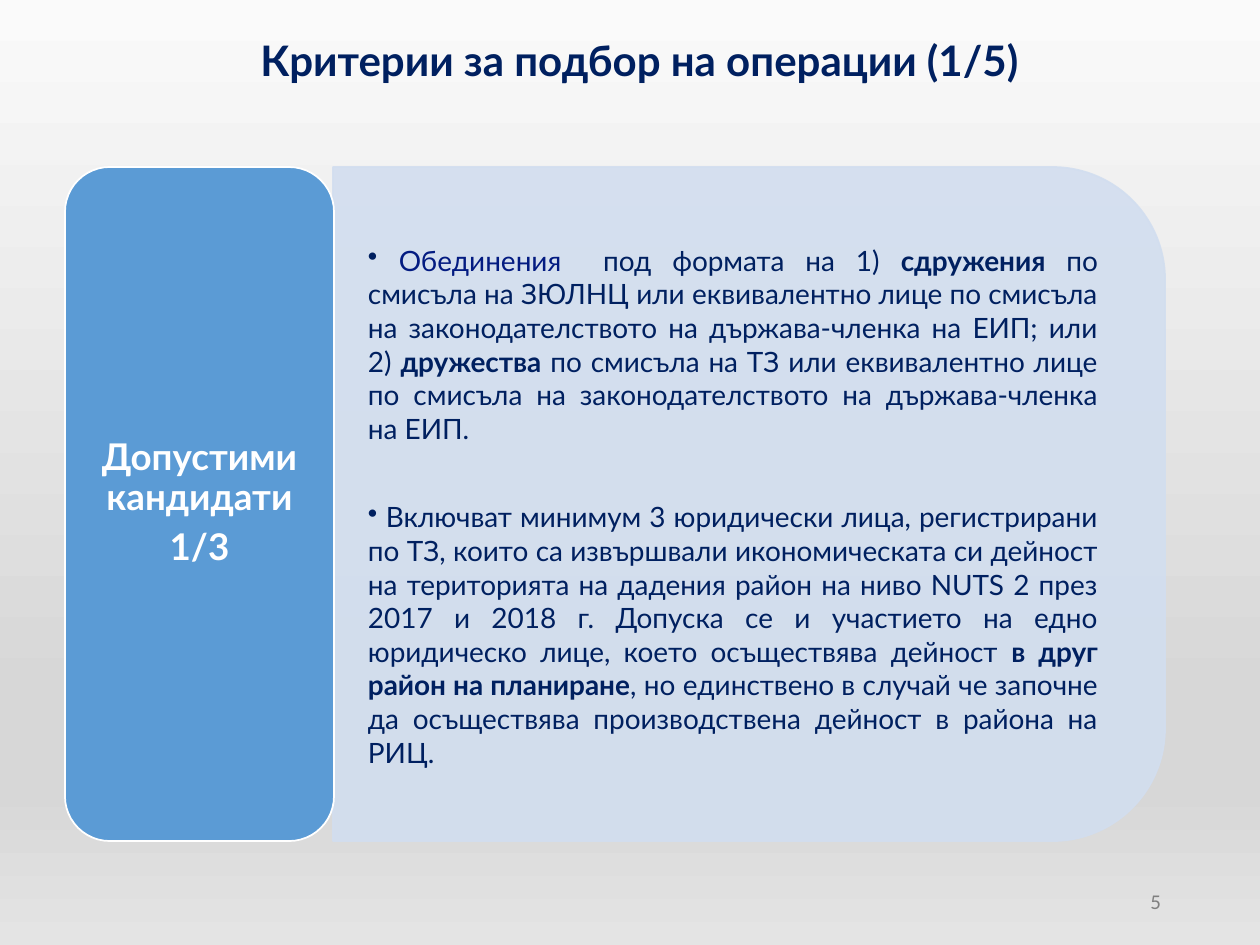
from copy import deepcopy
from dataclasses import dataclass

from lxml import etree
from pptx import Presentation
from pptx.dml.color import RGBColor
from pptx.enum.shapes import MSO_SHAPE
from pptx.enum.text import MSO_ANCHOR, PP_ALIGN
from pptx.oxml.ns import qn
from pptx.util import Pt

PX = 914400 / 126
ROUNDED = MSO_SHAPE.ROUNDED_RECTANGLE
ROUNDED_TOP = MSO_SHAPE.ROUND_2_SAME_RECTANGLE
MIDDLE = MSO_ANCHOR.MIDDLE
CENTER, RIGHT, JUSTIFY = PP_ALIGN.CENTER, PP_ALIGN.RIGHT, PP_ALIGN.JUSTIFY


@dataclass(frozen=True)
class Theme:
    navy: str = "002060"
    accent: str = "031B81"
    blue: str = "5B9BD5"
    pale: str = "D2DEEF"
    white: str = "FFFFFF"
    gray: str = "808080"
    backdrop: tuple = ((0, "FAFAFA"), (74, "D7D7D7"), (83, "D7D7D7"), (100, "E4E4E4"))
    font: str = "Lato"
    number_font: str = "Calibri"
    title_size: int = 24
    label_size: int = 21
    body_size: int = 16
    number_size: int = 12


@dataclass(frozen=True)
class Span:
    text: str
    bold: bool = False
    color: str = Theme.navy


def emu(*lengths):
    return [round(length * PX) for length in lengths]


class SlideBuilder:
    def __init__(self, slide, theme):
        self.slide = slide
        self.theme = theme

    def background(self):
        fill = self.slide.background.fill
        fill.gradient()
        fill.gradient_angle = 270
        stops = fill.gradient_stops
        stop_list = self.slide.element.find(".//" + qn("a:gsLst"))
        for _ in range(len(self.theme.backdrop) - len(stops)):
            stop_list.append(deepcopy(stop_list[0]))
        for element, (position, color) in zip(stop_list, self.theme.backdrop):
            element.set("pos", str(position * 1000))
            for child in list(element):
                element.remove(child)
            etree.SubElement(element, qn("a:srgbClr"), val=color)

    def shape(self, kind, box, fill, line, rotation=0, opacity=100):
        shape = self.slide.shapes.add_shape(kind, *emu(*box))
        shape.shadow.inherit = False
        shape.rotation = rotation
        shape.fill.solid()
        shape.fill.fore_color.rgb = RGBColor.from_string(fill)
        shape.line.color.rgb = RGBColor.from_string(line)
        shape.line.width = Pt(1)
        if opacity < 100:
            for color in shape.element.spPr.iter(qn("a:srgbClr")):
                etree.SubElement(color, qn("a:alpha"), val=str(opacity * 1000))
        return shape

    def text_box(self, box):
        return self.slide.shapes.add_textbox(*emu(*box))

    def set_text(self, shape, paragraphs, size, align, font=None, inset=(12, 6),
                 spacing=None, gap=0, bullet=False):
        frame = shape.text_frame
        frame.word_wrap = True
        frame.vertical_anchor = MIDDLE
        horizontal, vertical = emu(*inset)
        frame.margin_left = frame.margin_right = horizontal
        frame.margin_top = frame.margin_bottom = vertical
        for index, spans in enumerate(paragraphs):
            paragraph = frame.add_paragraph() if index else frame.paragraphs[0]
            paragraph.alignment = align
            if spacing:
                paragraph.line_spacing = spacing
            if index:
                paragraph.space_before = Pt(gap)
            if bullet:
                properties = paragraph._p.get_or_add_pPr()
                properties.set("marL", "0")
                properties.set("indent", "0")
                etree.SubElement(properties, qn("a:buChar"), char="•")
            for span in spans:
                run = paragraph.add_run()
                run.text = span.text
                run.font.name = font or self.theme.font
                run.font.size = Pt(size)
                run.font.bold = span.bold
                run.font.color.rgb = RGBColor.from_string(span.color)


def main():
    theme = Theme()
    presentation = Presentation()
    presentation.slide_width, presentation.slide_height = emu(1260, 945)
    slide = presentation.slides.add_slide(presentation.slide_layouts[6])
    builder = SlideBuilder(slide, theme)
    builder.background()

    number = builder.text_box((890, 876, 283, 50))
    builder.set_text(number, [[Span("5", color=theme.gray)]],
                     theme.number_size, RIGHT, theme.number_font)

    title = builder.text_box((74, 18, 1131, 90))
    builder.set_text(title, [[Span("Критерии за подбор на операции (1/5)", True)]],
                     theme.title_size, CENTER, spacing=0.9)

    builder.shape(ROUNDED_TOP, (412, 88, 674, 832), theme.pale, theme.pale, 90, 90)
    criteria = [
        [
            Span(" "),
            Span("Обединения", color=theme.accent),
            Span("  под формата на 1) "),
            Span("сдружения", True),
            Span(" по смисъла на ЗЮЛНЦ или еквивалентно лице по смисъла на "
                 "законодателството на държава-членка на ЕИП; или 2) "),
            Span("дружества", True),
            Span(" по смисъла на ТЗ или еквивалентно лице по смисъла на "
                 "законодателството на държава-членка на ЕИП."),
        ],
        [
            Span(" Включват минимум 3 юридически лица, регистрирани по ТЗ, които са "
                 "извършвали икономическата си дейност на територията на дадения район "
                 "на ниво NUTS 2 през 2017 и 2018 г. Допуска се и участието на едно "
                 "юридическо лице, което осъществява дейност "),
            Span("в друг район на планиране", True),
            Span(", но единствено в случай че започне да осъществява производствена "
                 "дейност в района на РИЦ."),
        ],
    ]
    body = builder.text_box((334, 202, 798, 608))
    builder.set_text(body, criteria, theme.body_size, JUSTIFY,
                     inset=(34, 18), gap=31.5, bullet=True)

    label = builder.shape(ROUNDED, (65, 167, 269, 674), theme.blue, theme.white)
    builder.set_text(label, [[Span(text, True, theme.white)]
                             for text in ("Допустими кандидати", "1/3")],
                     theme.label_size, CENTER, spacing=0.9, gap=6)

    presentation.save("out.pptx")


if __name__ == "__main__":
    main()
